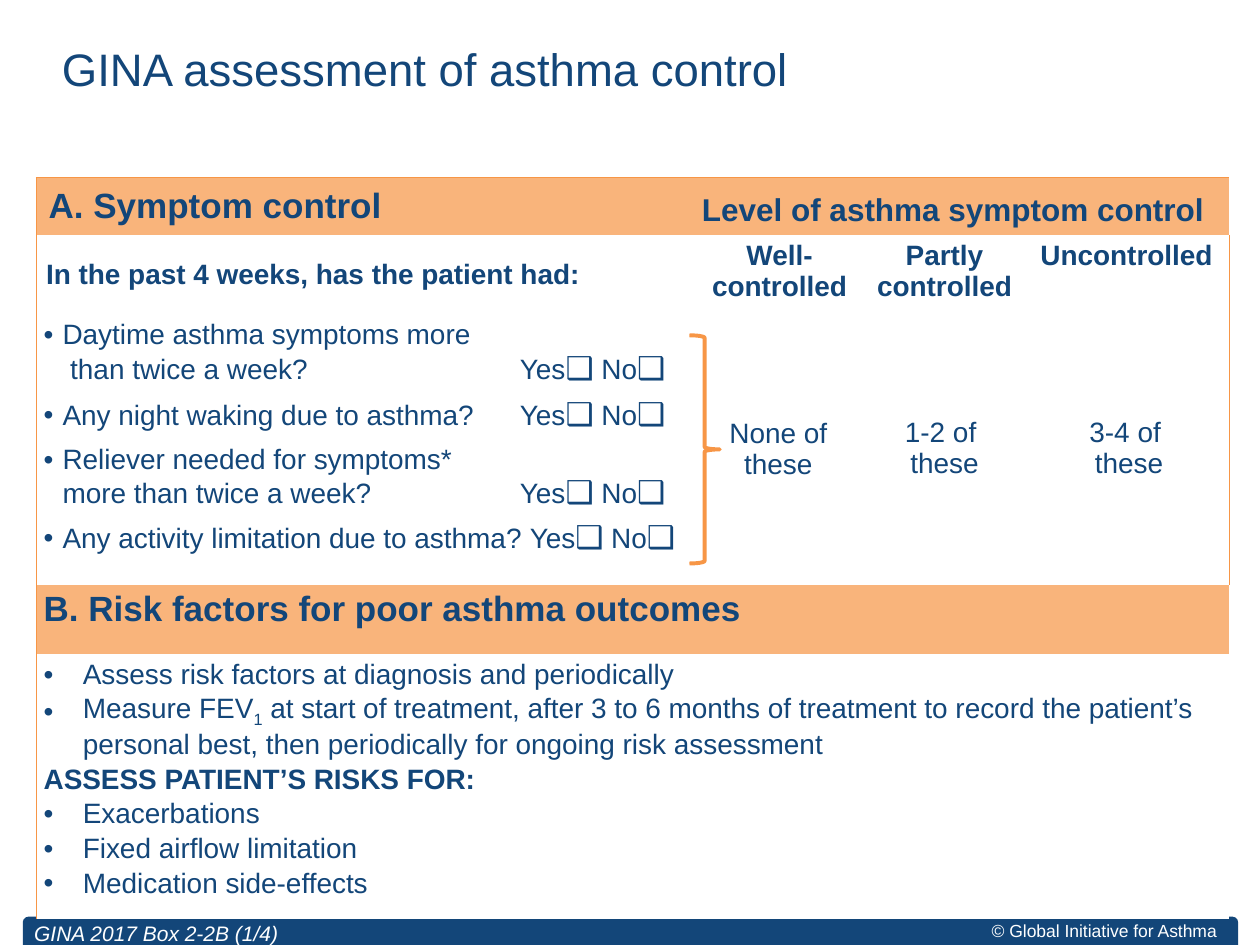
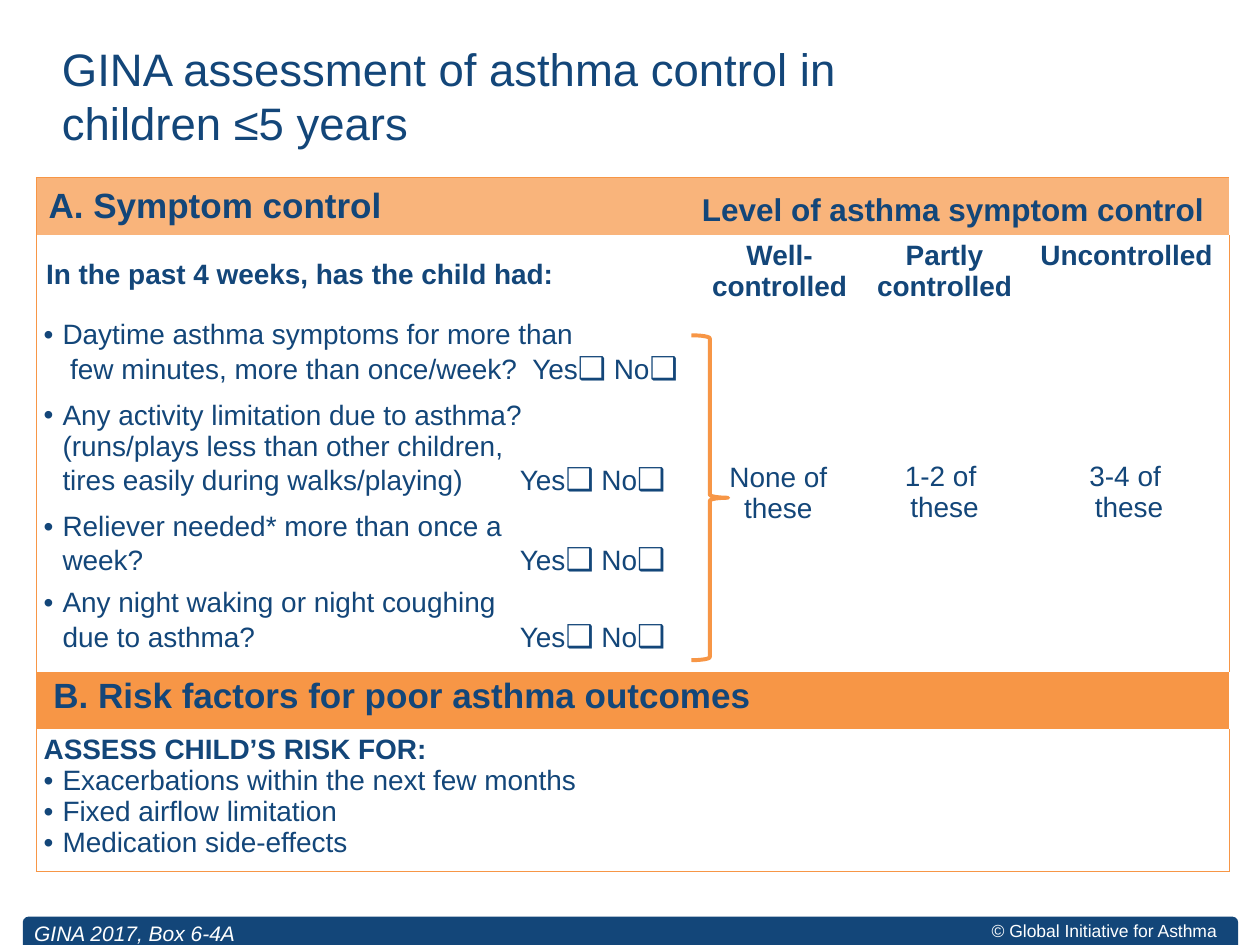
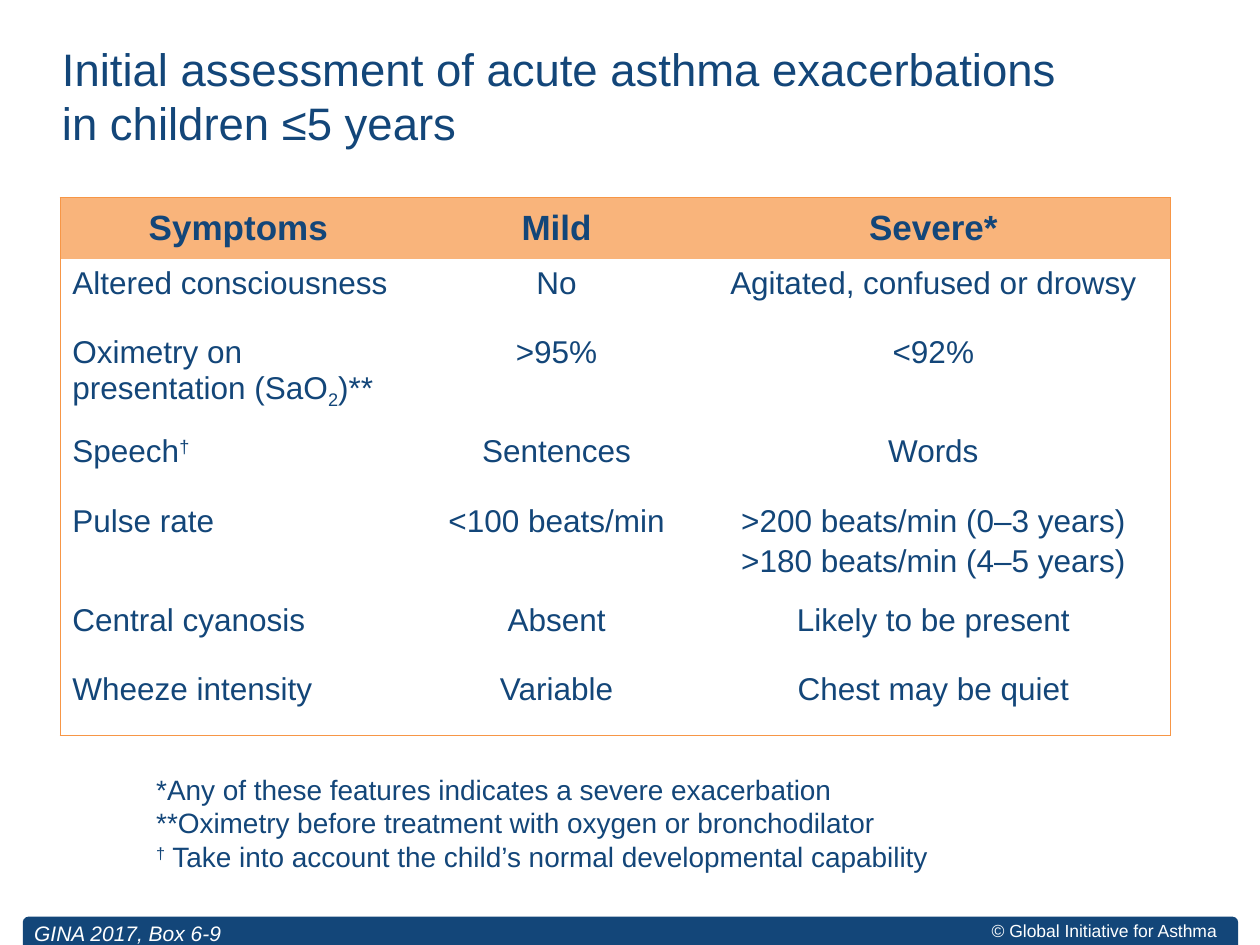
from lxml import etree
from pptx import Presentation
from pptx.dml.color import RGBColor
from pptx.enum import shapes, text
from pptx.oxml import ns
from pptx.util import Cm, Pt

NAVY = RGBColor(0x13, 0x46, 0x79)
PEACH = RGBColor(0xF9, 0xB4, 0x7B)
AMBER = RGBColor(0xF7, 0x96, 0x46)
WHITE = RGBColor(0xFF, 0xFF, 0xFF)
FONT = "Arial"
PLAIN = "{2D5ABB26-0587-4C30-8999-92F81FD0307C}"
MID = text.MSO_ANCHOR.MIDDLE
TOP = text.MSO_ANCHOR.TOP
CENTER = text.PP_ALIGN.CENTER
TIGHT = (0.05, 0.1, 0.1, 0.05)
EVEN = (0.05, 0.1, 0.05, 0.1)
LOOSE = (0.25, 0.13, 0.25, 0.13)
SHORT = (0.48, -0.38)
LONG = (0.89, -0.79)
ANSWER = "Yes|❑| No|❑"
SHIFT = {"_": "-25000", "^": "30000"}


def child(node, tag, **attrs):
    return etree.SubElement(node, ns.qn("a:" + tag), attrs)


def add_run(para, part, size, bold, italic, color):
    shift = SHIFT.get(part[0])
    run = para.add_run()
    run.text = part[1:] if shift else part
    font = run.font
    font.name = FONT
    font.size = Pt(18 if part == "❑" else size)
    font.bold = bold or part == "❑"
    font.italic = italic
    font.color.rgb = color
    if shift:
        run._r.get_or_add_rPr().set("baseline", shift)


def write(frame, lines, size=16, bold=False, italic=False, color=NAVY, align=None,
          left=0.0, hang=SHORT, gap=0):
    for num, line in enumerate(lines):
        para = frame.paragraphs[0] if num == 0 else frame.add_paragraph()
        if align:
            para.alignment = align
        if num and gap:
            para.space_before = Pt(gap)
        dot = line.startswith("•")
        start, first = hang if dot else (left, 0)
        props = para._p.get_or_add_pPr()
        props.set("marL", str(Cm(start)))
        props.set("indent", str(Cm(first)))
        if dot:
            child(props, "buFont", typeface=FONT)
            child(props, "buChar", char="•")
        if "\t" in line:
            child(child(props, "tabLst"), "tab", pos=str(Cm(13.46)), algn="r")
        for part in line.lstrip("•").split("|"):
            for row, piece in enumerate(part.split("\n")):
                if row:
                    para.add_line_break()
                    child(para._p[-1], "rPr", sz=str(size * 100))
                add_run(para, piece, size, bold and not dot, italic, color)


def set_pad(target, pad):
    (target.margin_left, target.margin_top,
     target.margin_right, target.margin_bottom) = map(Cm, pad)


def add_text(slide, box, lines, pad=LOOSE, anchor=TOP, wrap=True, **style):
    frame = slide.shapes.add_textbox(*map(Cm, box)).text_frame
    frame.word_wrap = wrap
    frame.vertical_anchor = anchor
    set_pad(frame, pad)
    write(frame, lines, **style)


def put(cell, lines, pad=LOOSE, anchor=TOP, **style):
    cell.vertical_anchor = anchor
    set_pad(cell, pad)
    write(cell.text_frame, lines, **style)


def paint(cell, color):
    cell.fill.solid()
    cell.fill.fore_color.rgb = color


def add_grid(slide, x, y, cols, rows):
    box = map(Cm, (x, y, sum(cols), sum(rows)))
    frame = slide.shapes.add_table(len(rows), len(cols), *box)
    table = frame.table
    table.first_row = table.horz_banding = False
    table._tbl.tblPr.find(ns.qn("a:tableStyleId")).text = PLAIN
    for col, width in zip(table.columns, cols):
        col.width = Cm(width)
    for row, height in zip(table.rows, rows):
        row.height = Cm(height)
    for cell in table.iter_cells():
        paint(cell, WHITE)
        set_pad(cell, TIGHT)
        cell.text_frame.paragraphs[0].font.size = Pt(16)
    return table


def frame_grid(table, closed=True):
    last, end = len(table.rows) - 1, len(table.columns) - 1
    for r in range(last + 1):
        for c in range(end + 1):
            props = table.cell(r, c)._tc.get_or_add_tcPr()
            edges = (("lnL", c == 0), ("lnR", c == end),
                     ("lnT", r == 0), ("lnB", closed and r == last))
            names = [name for name, outer in edges if outer]
            for pos, name in enumerate(names):
                line = etree.Element(ns.qn("a:" + name), w=str(Pt(0.5)))
                child(child(line, "solidFill"), "srgbClr", val=str(AMBER))
                props.insert(pos, line)


def add_base(deck, title, source):
    slide = deck.slides.add_slide(deck.slide_layouts[6])
    band = slide.shapes.add_shape(shapes.MSO_SHAPE.ROUND_2_SAME_RECTANGLE,
                                  Cm(0.46), Cm(18.48), Cm(24.5), Cm(0.57))
    band.adjustments[0] = 0.2
    band.shadow.inherit = False
    band.fill.solid()
    band.fill.fore_color.rgb = NAVY
    band.line.fill.background()
    add_text(slide, (19.86, 18.45, 4.8, 0.61), ["© Global Initiative for Asthma"],
             pad=(0, 0, 0, 0), anchor=MID, wrap=False, size=10, color=WHITE, align=CENTER)
    add_text(slide, (0.49, 0.69, 21.1, 2.59), [title], size=26, left=0.51)
    add_text(slide, (0.44, 18.43, 7.9, 0.76), [source], size=12, italic=True, color=WHITE)
    return slide


def add_control(slide, x, y, rows, who, asks, risk, tint, notes, brace, wide, **style):
    table = add_grid(slide, x, y, (13.26, 3.35, 3.4, 4.04), rows)
    cell = table.cell
    cell(0, 0).merge(cell(0, 1))
    cell(0, 2).merge(cell(0, 3))
    cell(6, 0).merge(cell(6, 3))
    for col in (1, 2, 3):
        cell(2, col).merge(cell(5, col))
    if wide:
        cell(7, 0).merge(cell(7, 3))
    for col in range(4):
        paint(cell(0, col), PEACH)
        paint(cell(6, col), tint)
    put(cell(0, 0), ["A. Symptom control"], anchor=MID, size=20, bold=True)
    put(cell(1, 0), [f"In the past 4 weeks, has the {who} had:"],
        pad=(0.1, 0.1, 0.1, 0.05), anchor=MID, bold=True, left=0.1)
    levels = (("Well-controlled", EVEN, "None of these", TIGHT, 0.1),
              ("Partly controlled", EVEN, "1-2 of \nthese", LOOSE, 0),
              ("Uncontrolled", (0, 0.1, 0.1, 0.1), "3-4 of \nthese", LOOSE, 0))
    for col, (level, rim, count, pad, left) in enumerate(levels, 1):
        put(cell(1, col), [level], pad=rim, bold=True, align=CENTER, left=left)
        put(cell(2, col), [count], pad=pad, anchor=MID, align=CENTER, left=left)
    for row, ask in enumerate(asks, 2):
        put(cell(row, 0), ["•" + ask + ANSWER], pad=TIGHT, anchor=TOP if row == 5 else MID)
    put(cell(6, 0), [risk], pad=TIGHT, size=20, bold=True, left=0.1)
    put(cell(7, 0), notes, pad=TIGHT, bold=True, left=0.1, **style)
    frame_grid(table, closed=not wide)

    left, width, height = brace
    mark = slide.shapes.add_shape(shapes.MSO_SHAPE.RIGHT_BRACE, Cm(x + left),
                                  Cm(y + 3.18), Cm(width), Cm(height))
    mark.shadow.inherit = False
    mark.fill.background()
    mark.line.color.rgb = AMBER
    mark.line.width = Pt(2.25)
    add_text(slide, (x + 13.17, y + 0.13, 11.1, 1.02),
             ["Level of asthma symptom control"], size=18, bold=True)


def add_signs(slide, x, y, heads, signs):
    table = add_grid(slide, x, y, (7.19, 5.64, 9.55), (1.16, 1.4, 2, 1.4, 2, 1.4, 1.4))
    for col, head in enumerate(heads):
        paint(table.cell(0, col), PEACH)
        put(table.cell(0, col), [head], pad=(0.25, 0.2, 0.25, 0.2), anchor=MID,
            size=20, bold=True, align=CENTER)
    for row, sign in enumerate(signs, 1):
        for col, value in enumerate(sign):
            put(table.cell(row, col), value.split("\n"), size=18, gap=3,
                align=CENTER if col else None)
    frame_grid(table)


def main():
    deck = Presentation()
    deck.slide_width, deck.slide_height = Cm(25.4), Cm(19.05)

    slide = add_base(deck, "GINA assessment of asthma control", "GINA 2017 Box 2-2B (1/4)")
    add_control(
        slide, 0.73, 3.58, (1.16, 0.5, 0.64, 0.5, 0.5, 1.4, 1.4, 2.36), "patient",
        ("Daytime asthma symptoms more\n than twice a week?\t",
         "Any night waking due to asthma? \t",
         "Reliever needed for symptoms* \nmore than twice a week? \t",
         "Any activity limitation due to asthma? \t"),
        "B. Risk factors for poor asthma outcomes", PEACH,
        ["•Assess risk factors at diagnosis and periodically",
         "•Measure FEV|_1| at start of treatment, after 3 to 6 months of treatment to "
         "record the patient’s personal best, then periodically for ongoing risk assessment",
         "ASSESS PATIENT’S RISKS FOR:",
         "•Exacerbations", "•Fixed airflow limitation", "•Medication side-effects"],
        (13.17, 0.61, 4.6), True, hang=LONG, gap=2)

    slide = add_base(deck, "GINA assessment of asthma control in \nchildren ≤5 years",
                     "GINA 2017, Box 6-4A")
    add_control(
        slide, 0.73, 3.58, (1.16, 0.5, 0.64, 0.5, 0.5, 1.8, 1.16, 1.8), "child",
        ("Daytime asthma symptoms for more than\n few minutes, more than once/week? \t ",
         "Any activity limitation due to asthma? \n(runs/plays less than other children, "
         "\ntires easily during walks/playing) \t",
         "Reliever needed* more than once a \nweek? \t",
         "Any night waking or night coughing \ndue to asthma? \t"),
        " B. Risk factors for poor asthma outcomes", AMBER,
        ["ASSESS CHILD’S RISK FOR:", "•Exacerbations within the next few months",
         "•Fixed airflow limitation", "•Medication side-effects"],
        (13.21, 0.74, 6.55), False)

    slide = add_base(deck, "Initial assessment of acute asthma exacerbations in children ≤5 years",
                     "GINA 2017, Box 6-9")
    add_signs(slide, 1.21, 3.98, ("Symptoms", "Mild", "Severe*"), (
        ("Altered consciousness", "No", "Agitated, confused or drowsy"),
        ("Oximetry on presentation (SaO|_2|)**", ">95%", "<92%"),
        ("Speech|^†", "Sentences", "Words"),
        ("Pulse rate", "<100 beats/min",
         ">200 beats/min (0–3 years)\n>180 beats/min (4–5 years)"),
        ("Central cyanosis", "Absent", "Likely to be present"),
        ("Wheeze intensity", "Variable", "Chest may be quiet")))
    add_text(slide, (2.9, 15.44, 17.65, 2.31),
             ["*Any of these features indicates a severe exacerbation",
              "**Oximetry before treatment with oxygen or bronchodilator",
              "^†| Take into account the child’s normal developmental capability"])
    deck.save("out.pptx")


if __name__ == "__main__":
    main()
